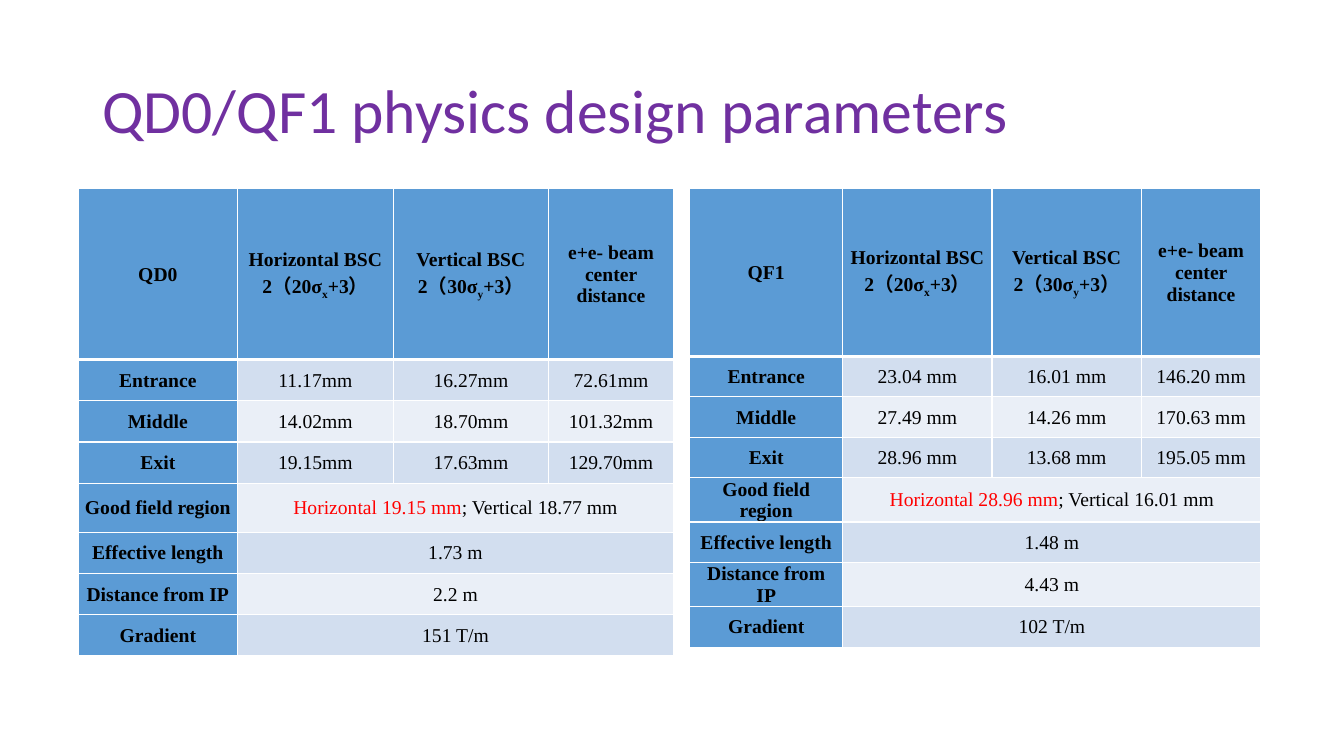
from lxml.etree import SubElement
from pptx import Presentation
from pptx.dml.color import RGBColor
from pptx.enum.text import MSO_ANCHOR, MSO_AUTO_SIZE, PP_ALIGN
from pptx.oxml.ns import qn
from pptx.util import Cm, Pt

COLORS = {
    "title": "7030A0",
    "header": "5B9BD5",
    "band_dark": "D2DEEF",
    "band_light": "EAEFF7",
    "text": "000000",
    "highlight": "FF0000",
    "border": "FFFFFF",
}
BODY_FONT = "Times New Roman"
CJK_FONT = "Noto Sans CJK SC"
ROW_LABELS = ["Entrance", "Middle", "Exit", "Good field region",
              "Effective length", "Distance from IP", "Gradient"]


def add_text(paragraph, text, font=BODY_FONT, size=14, color="text", bold=False, subscript=False):
    run = paragraph.add_run()
    run.text = text
    run.font.name = font
    run.font.size = Pt(size)
    run.font.bold = bold
    run.font.color.rgb = RGBColor.from_string(COLORS[color])
    properties = run.font._element
    SubElement(properties, qn("a:ea")).set("typeface", font)
    if subscript:
        properties.set("baseline", "-25000")


def clearance(direction, factor, axis):
    """Header paragraphs for one beam stay-clear column."""
    return [
        [(f"{direction} BSC", {})],
        [("2", {}), ("（", {"font": CJK_FONT}), (f"{factor}σ", {}),
         (axis, {"subscript": True}), ("+3", {}), ("）", {"font": CJK_FONT})],
    ]


class ParameterSlide:
    def __init__(self, presentation):
        self.slide = presentation.slides.add_slide(presentation.slide_layouts[5])

    def title(self, text, left, top, width, height):
        shape = self.slide.shapes.title
        shape.left, shape.top, shape.width, shape.height = map(Cm, (left, top, width, height))
        frame = shape.text_frame
        frame.word_wrap = True
        frame.auto_size = MSO_AUTO_SIZE.NONE
        frame.vertical_anchor = MSO_ANCHOR.MIDDLE
        paragraph = frame.paragraphs[0]
        paragraph.alignment = PP_ALIGN.LEFT
        paragraph.line_spacing = 0.9
        add_text(paragraph, text, font="Calibri", size=44, color="title")

    def cell(self, cell, paragraphs, fill, bold=False):
        cell.fill.solid()
        cell.fill.fore_color.rgb = RGBColor.from_string(COLORS[fill])
        cell.vertical_anchor = MSO_ANCHOR.MIDDLE
        cell.margin_left = cell.margin_right = Cm(0.16)
        cell.margin_top, cell.margin_bottom = Cm(0.02), Cm(0)
        frame = cell.text_frame
        for index, runs in enumerate(paragraphs):
            paragraph = frame.add_paragraph() if index else frame.paragraphs[0]
            paragraph.alignment = PP_ALIGN.CENTER
            for text, style in runs:
                add_text(paragraph, text, bold=bold, **style)

    def header_border(self, cell):
        properties = cell._tc.get_or_add_tcPr()
        for index, (side, width) in enumerate([("lnL", 1), ("lnR", 1), ("lnT", 1), ("lnB", 3)]):
            line = SubElement(properties, qn(f"a:{side}"), w=str(Pt(width)))
            fill = SubElement(line, qn("a:solidFill"))
            SubElement(fill, qn("a:srgbClr"), val=COLORS["border"])
            properties.insert(index, line)

    def table(self, name, left, top, widths, heights, values):
        frame = self.slide.shapes.add_table(len(heights), len(widths), Cm(left), Cm(top),
                                            Cm(sum(widths)), Cm(sum(heights)))
        table = frame.table
        for column, width in zip(table.columns, widths):
            column.width = Cm(width)
        for row, height in zip(table.rows, heights):
            row.height = Cm(height)

        # Header row
        headers = [[[(name, {})]], clearance("Horizontal", 20, "x"),
                   clearance("Vertical", 30, "y"), [[("e+e- beam center distance", {})]]]
        for column, paragraphs in enumerate(headers):
            cell = table.cell(0, column)
            self.cell(cell, paragraphs, "header", bold=True)
            self.header_border(cell)

        # Labelled rows; a single value spans all value columns
        for row, (label, entries) in enumerate(zip(ROW_LABELS, values), 1):
            self.cell(table.cell(row, 0), [[(label, {})]], "header", bold=True)
            if len(entries) == 1:
                table.cell(row, 1).merge(table.cell(row, len(widths) - 1))
            band = "band_dark" if row % 2 else "band_light"
            for column, entry in enumerate(entries, 1):
                runs = [(entry, {})] if isinstance(entry, str) else entry
                self.cell(table.cell(row, column), [runs], band)


def good_field(horizontal, vertical):
    return [[(f"Horizontal {horizontal} mm", {"color": "highlight"}),
             (f"; Vertical {vertical} mm", {})]]


def main():
    presentation = Presentation()
    presentation.slide_width, presentation.slide_height = Cm(33.87), Cm(19.05)
    page = ParameterSlide(presentation)
    page.title("QD0/QF1 physics design parameters", 2.33, 1.01, 29.21, 3.68)

    # Left magnet
    page.table("QD0", 1.97, 4.76, [4.02, 3.92, 3.92, 3.14],
               [4.3] + [1.04] * 3 + [1.23] + [1.04] * 3, [
        ["11.17mm", "16.27mm", "72.61mm"],
        ["14.02mm", "18.70mm", "101.32mm"],
        ["19.15mm", "17.63mm", "129.70mm"],
        good_field("19.15", "18.77"),
        ["1.73 m"],
        ["2.2 m"],
        ["151 T/m"],
    ])

    # Right magnet
    page.table("QF1", 17.38, 4.76, [3.86, 3.76, 3.76, 3.02], [4.22] + [1.02] * 7, [
        ["23.04 mm", "16.01 mm", "146.20 mm"],
        ["27.49 mm", "14.26 mm", "170.63 mm"],
        ["28.96 mm", "13.68 mm", "195.05 mm"],
        good_field("28.96", "16.01"),
        ["1.48 m"],
        ["4.43 m"],
        ["102 T/m"],
    ])
    presentation.save("out.pptx")


if __name__ == "__main__":
    main()
